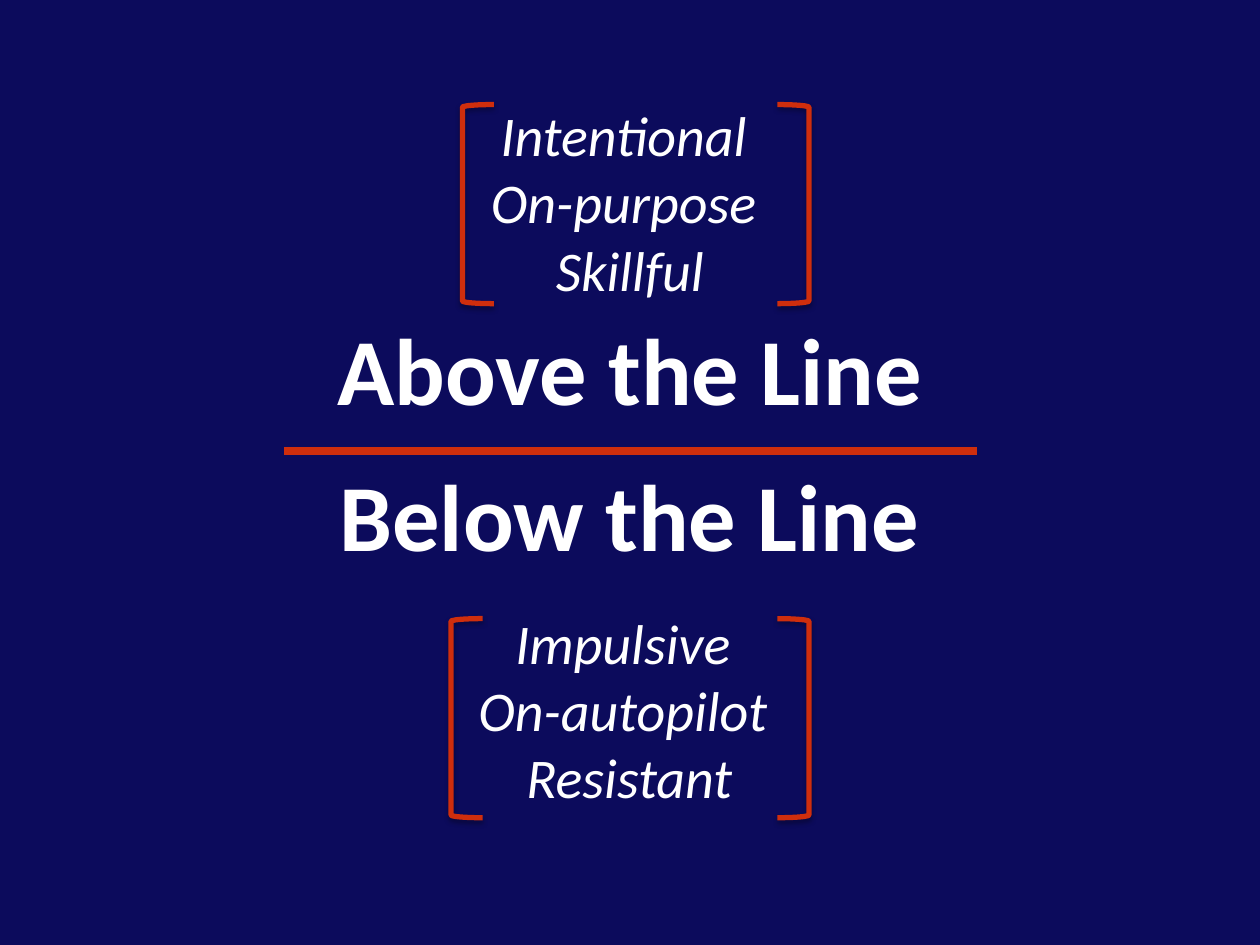
"""Build the Above the Line / Below the Line slide."""
from typing import NamedTuple

from lxml.etree import SubElement
from pptx import Presentation
from pptx.dml.color import RGBColor
from pptx.enum.shapes import MSO_CONNECTOR, MSO_SHAPE
from pptx.enum.text import MSO_AUTO_SIZE, PP_ALIGN
from pptx.oxml.ns import qn
from pptx.slide import Slide
from pptx.util import Inches, Pt

NAVY, WHITE, RED = "0C0B5C", "FFFFFF", "CF2E0D"


class Caption(NamedTuple):
    left: float
    top: float
    width: float
    height: float
    lines: tuple[str, ...]
    size: int
    bold: bool = False
    italic: bool = False


class BracketPair(NamedTuple):
    left: float
    right: float
    top: float


CAPTIONS = (
    Caption(2.55, 2.42, 4.9, 1.01, ("Above the Line",), 54, bold=True),
    Caption(2.57, 3.58, 4.85, 1.01, ("Below the Line",), 54, bold=True),
    Caption(3.78, 0.75, 2.44, 1.72,
            ("Intentional ", "On-purpose ", "Skillful"), 32, italic=True),
    Caption(3.68, 4.78, 2.63, 1.72,
            ("Impulsive ", "On-autopilot ", "Resistant"), 32, italic=True),
)
BRACKET_PAIRS = (BracketPair(3.67, 6.17, 0.83), BracketPair(3.58, 6.17, 4.91))


def color(value: str) -> RGBColor:
    """Turn a hex string into a colour."""
    return RGBColor.from_string(value)


def add_caption(slide: Slide, caption: Caption) -> None:
    """Add centred white lines of text."""
    box = slide.shapes.add_textbox(Inches(caption.left), Inches(caption.top),
                                   Inches(caption.width), Inches(caption.height))
    frame = box.text_frame
    frame.word_wrap = False
    frame.auto_size = MSO_AUTO_SIZE.SHAPE_TO_FIT_TEXT
    for index, line in enumerate(caption.lines):
        paragraph = frame.add_paragraph() if index else frame.paragraphs[0]
        paragraph.alignment = PP_ALIGN.CENTER
        run = paragraph.add_run()
        run.text = line
        run.font.name = "Calibri"
        run.font.size = Pt(caption.size)
        run.font.bold = caption.bold
        run.font.italic = caption.italic
        run.font.color.rgb = color(WHITE)


def add_bracket(slide: Slide, preset: MSO_SHAPE, left: float, top: float) -> None:
    """Add a red bracket with a soft shadow below it."""
    bracket = slide.shapes.add_shape(preset, Inches(left), Inches(top),
                                     Inches(0.25), Inches(1.58))
    bracket.fill.background()
    bracket.line.color.rgb = color(RED)
    bracket.line.width = Pt(3)
    bracket.shadow.inherit = False
    effects = bracket._element.spPr.find(qn("a:effectLst"))
    shadow = SubElement(effects, qn("a:outerShdw"), blurRad=str(Pt(3.1)),
                        dist=str(Pt(1.8)), dir="5400000", rotWithShape="0")
    tint = SubElement(shadow, qn("a:srgbClr"), val="000000")
    SubElement(tint, qn("a:alpha"), val="35000")


def add_divider(slide: Slide) -> None:
    """Add the red line between the two halves."""
    divider = slide.shapes.add_connector(MSO_CONNECTOR.STRAIGHT, Inches(7.75),
                                         Inches(3.58), Inches(2.25), Inches(3.58))
    divider.line.color.rgb = color(RED)
    divider.line.width = Pt(4.5)
    SubElement(divider._element.spPr, qn("a:effectLst"))


def main() -> None:
    """Build and save the slide."""
    deck = Presentation()
    deck.slide_width, deck.slide_height = Inches(10), Inches(7.5)
    slide = deck.slides.add_slide(deck.slide_layouts[6])
    slide.background.fill.solid()
    slide.background.fill.fore_color.rgb = color(NAVY)
    for caption in CAPTIONS:
        add_caption(slide, caption)
    for pair in BRACKET_PAIRS:
        add_bracket(slide, MSO_SHAPE.LEFT_BRACKET, pair.left, pair.top)
        add_bracket(slide, MSO_SHAPE.RIGHT_BRACKET, pair.right, pair.top)
    add_divider(slide)
    deck.save("out.pptx")


if __name__ == "__main__":
    main()
